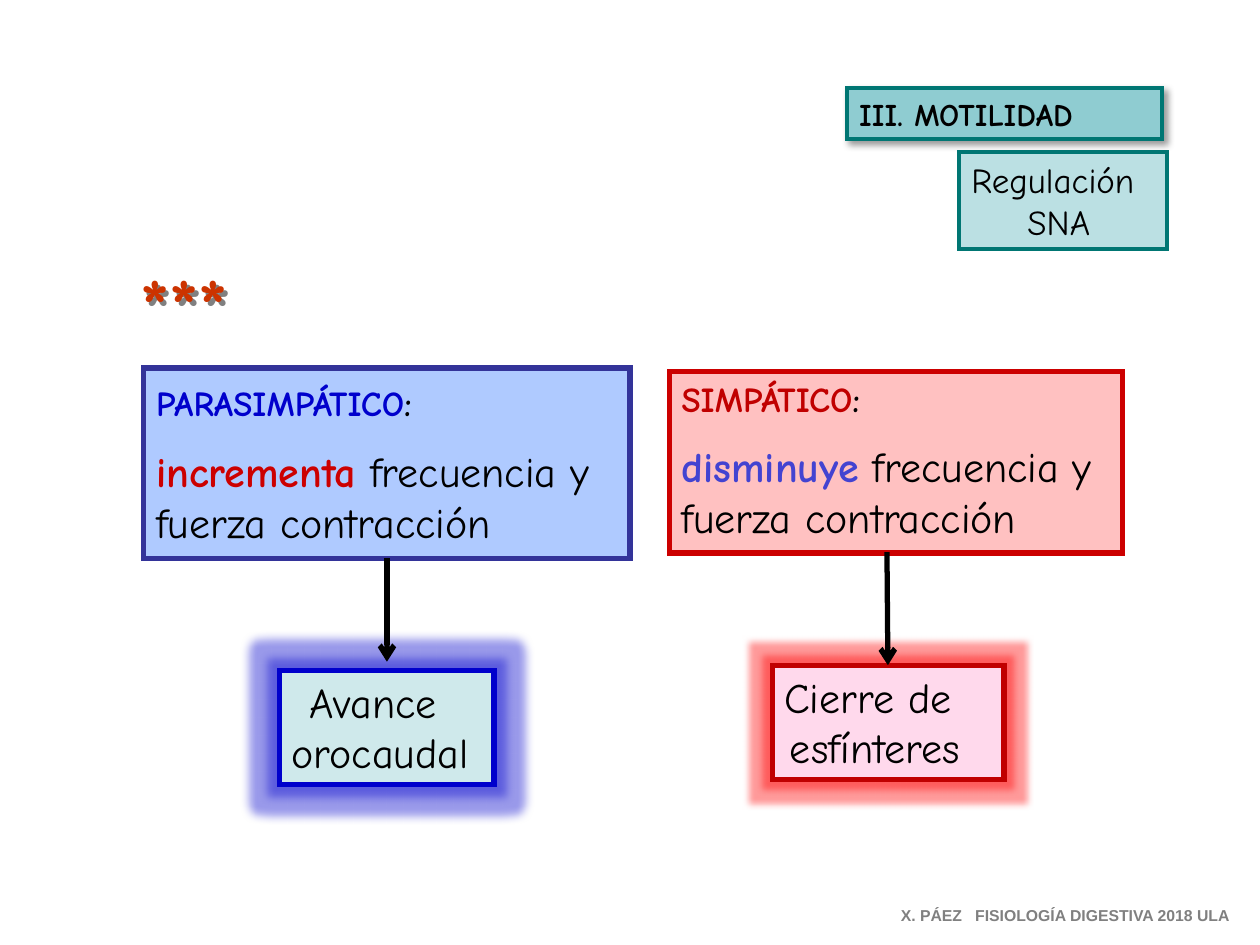
"""Build the slide on autonomic regulation of digestive motility."""
from dataclasses import dataclass

from lxml import etree
from pptx import Presentation
from pptx.dml.color import RGBColor
from pptx.enum.shapes import MSO_CONNECTOR, MSO_SHAPE
from pptx.enum.text import MSO_ANCHOR, MSO_AUTO_SIZE, PP_ALIGN
from pptx.oxml.ns import qn
from pptx.util import Cm, Pt

RECT = MSO_SHAPE.RECTANGLE
STRAIGHT = MSO_CONNECTOR.STRAIGHT
TOP = MSO_ANCHOR.TOP
NO_FIT = MSO_AUTO_SIZE.NONE
LEFT, CENTER = PP_ALIGN.LEFT, PP_ALIGN.CENTER
FONT = "Comic Neue"
COLORS = {
    "black": "000000", "gray": "808080", "teal": "007673",
    "header": "8FCCD1", "topic": "BBE0E3", "navy": "333399",
    "blue": "0000CC", "sky": "AFCAFF", "violet": "4343D1",
    "red": "CC0000", "crimson": "C00000", "rose": "FFC1C1",
    "mint": "CFE9EB", "pink": "FFD9EC", "orange": "CC3300",
    "glow_red": "FF0000",
}


@dataclass
class Area:
    left: float
    top: float
    width: float
    height: float

    def lengths(self) -> tuple:
        return Cm(self.left), Cm(self.top), Cm(self.width), Cm(self.height)


@dataclass
class Branch:
    area: Area
    fill: str
    line: str
    name: str
    name_color: str
    tail: str
    verb: str
    verb_color: str


@dataclass
class Label:
    area: Area
    fill: str
    line: str
    weight: float
    lines: tuple
    size: int
    insets: tuple
    glow: str = ""
    radius: float = 0


@dataclass
class Arrow:
    start: tuple
    end: tuple


BRANCHES = [
    Branch(Area(2.9, 7.42, 9.8, 3.84), "sky", "navy",
           "PARASIMPÁTICO", "blue", " ", "incrementa", "red"),
    Branch(Area(13.49, 7.49, 9.14, 3.66), "rose", "red",
           "SIMPÁTICO", "crimson", "", "disminuye", "violet"),
]
LABELS = [
    Label(Area(19.33, 3.07, 4.19, 1.96), "topic", "teal", 2.25,
          ("Regulación ", "SNA"), 20, (0.25, 0.41)),
    Label(Area(5.64, 13.51, 4.32, 2.31), "mint", "blue", 3,
          ("Avance ", "orocaudal"), 24, (0.05, 0.33), "blue", 11),
    Label(Area(15.57, 13.41, 4.67, 2.31), "pink", "crimson", 3,
          ("Cierre de ", "esfínteres"), 24, (0.05, 0.59), "glow_red", 8),
]
ARROWS = [Arrow((7.8, 11.25), (7.8, 13.34)),
          Arrow((17.88, 11.13), (17.9, 13.41))]


def rgb(name: str) -> RGBColor:
    return RGBColor.from_string(COLORS[name])


def add_effect(sp, tag: str, color: str, alpha: int = 40, **attrs: int) -> None:
    sp.shadow.inherit = False
    effects = sp._element.spPr.find(qn("a:effectLst"))
    effect = etree.SubElement(effects, qn(f"a:{tag}"),
                              {k: str(v) for k, v in attrs.items()})
    clr = etree.SubElement(effect, qn("a:srgbClr"), val=COLORS[color])
    etree.SubElement(clr, qn("a:alpha"), val=str(alpha * 1000))


def style_box(sp, fill: str, line: str, weight: float) -> None:
    sp.fill.solid()
    sp.fill.fore_color.rgb = rgb(fill)
    sp.line.color.rgb = rgb(line)
    sp.line.width = Pt(weight)
    etree.SubElement(sp.line._get_or_add_ln(), qn("a:miter"), lim="800000")
    sp.shadow.inherit = False


def prepare(sp, left: float = 0.25, right: float = 0.25):
    tf = sp.text_frame
    tf.word_wrap = True
    tf.auto_size = NO_FIT
    tf.vertical_anchor = TOP
    tf.margin_left, tf.margin_right = Cm(left), Cm(right)
    return tf


def add_run(p, text: str, *, size: float, color: str = "black",
            bold: bool = False, font: str = FONT, align=LEFT) -> None:
    p.alignment = align
    r = p.add_run()
    r.text = text
    r.font.name = font
    r.font.size = Pt(size)
    r.font.bold = bold
    r.font.color.rgb = rgb(color)


def draw_title(s) -> None:
    sp = s.shapes.title
    sp.left, sp.top, sp.width, sp.height = Area(17.07, 1.78, 6.35, 1.02).lengths()
    style_box(sp, "header", "teal", 2.25)
    add_effect(sp, "outerShdw", "black",
               blurRad=Pt(4), dist=Pt(3), dir=2700000)
    add_run(prepare(sp).paragraphs[0], "III. MOTILIDAD", size=18, bold=True)


def draw_branch(s, b: Branch) -> None:
    sp = s.shapes.add_shape(RECT, *b.area.lengths())
    style_box(sp, b.fill, b.line, 3)
    tf = prepare(sp)
    p = tf.paragraphs[0]
    add_run(p, b.name, size=20, color=b.name_color, bold=True)
    add_run(p, ":", size=20, bold=True)
    if b.tail:
        add_run(p, b.tail, size=24)
    p = tf.add_paragraph()
    p.space_before = Pt(12)
    add_run(p, b.verb, size=24, color=b.verb_color, bold=True)
    add_run(p, " frecuencia y fuerza contracción", size=24)


def draw_label(s, label: Label) -> None:
    sp = s.shapes.add_shape(RECT, *label.area.lengths())
    style_box(sp, label.fill, label.line, label.weight)
    if label.glow:
        add_effect(sp, "glow", label.glow, rad=Pt(label.radius))
    tf = prepare(sp, *label.insets)
    for i, text in enumerate(label.lines):
        p = tf.add_paragraph() if i else tf.paragraphs[0]
        add_run(p, text, size=label.size, align=CENTER)


def draw_arrow(s, arrow: Arrow) -> None:
    points = [Cm(v) for v in arrow.start + arrow.end]
    sp = s.shapes.add_connector(STRAIGHT, *points)
    sp.line.color.rgb = rgb("black")
    sp.line.width = Pt(3)
    etree.SubElement(sp.line._get_or_add_ln(), qn("a:tailEnd"), type="arrow")
    etree.SubElement(sp._element.spPr, qn("a:effectLst"))


def draw_text(s, area: Area, text: str, **fmt):
    sp = s.shapes.add_textbox(*area.lengths())
    add_run(prepare(sp).paragraphs[0], text, **fmt)
    return sp


def main() -> None:
    prs = Presentation()
    prs.slide_width, prs.slide_height = Cm(25.4), Cm(19.05)
    s = prs.slides.add_slide(prs.slide_layouts[5])
    draw_title(s)
    for branch in BRANCHES:
        draw_branch(s, branch)
    for label in LABELS:
        draw_label(s, label)
    for arrow in ARROWS:
        draw_arrow(s, arrow)
    stars = draw_text(s, Area(2.21, 5.05, 3, 2.13), "***",
                      size=44, color="orange", bold=True, align=CENTER)
    add_effect(stars, "outerShdw", "gray", 100, dist=Pt(3), dir=2700000)
    draw_text(s, Area(17.91, 18.14, 7.26, 0.64),
              "X. PÁEZ   FISIOLOGÍA DIGESTIVA 2018 ULA",
              size=9, color="gray", bold=True, font="Arial")
    prs.save("out.pptx")


if __name__ == "__main__":
    main()
